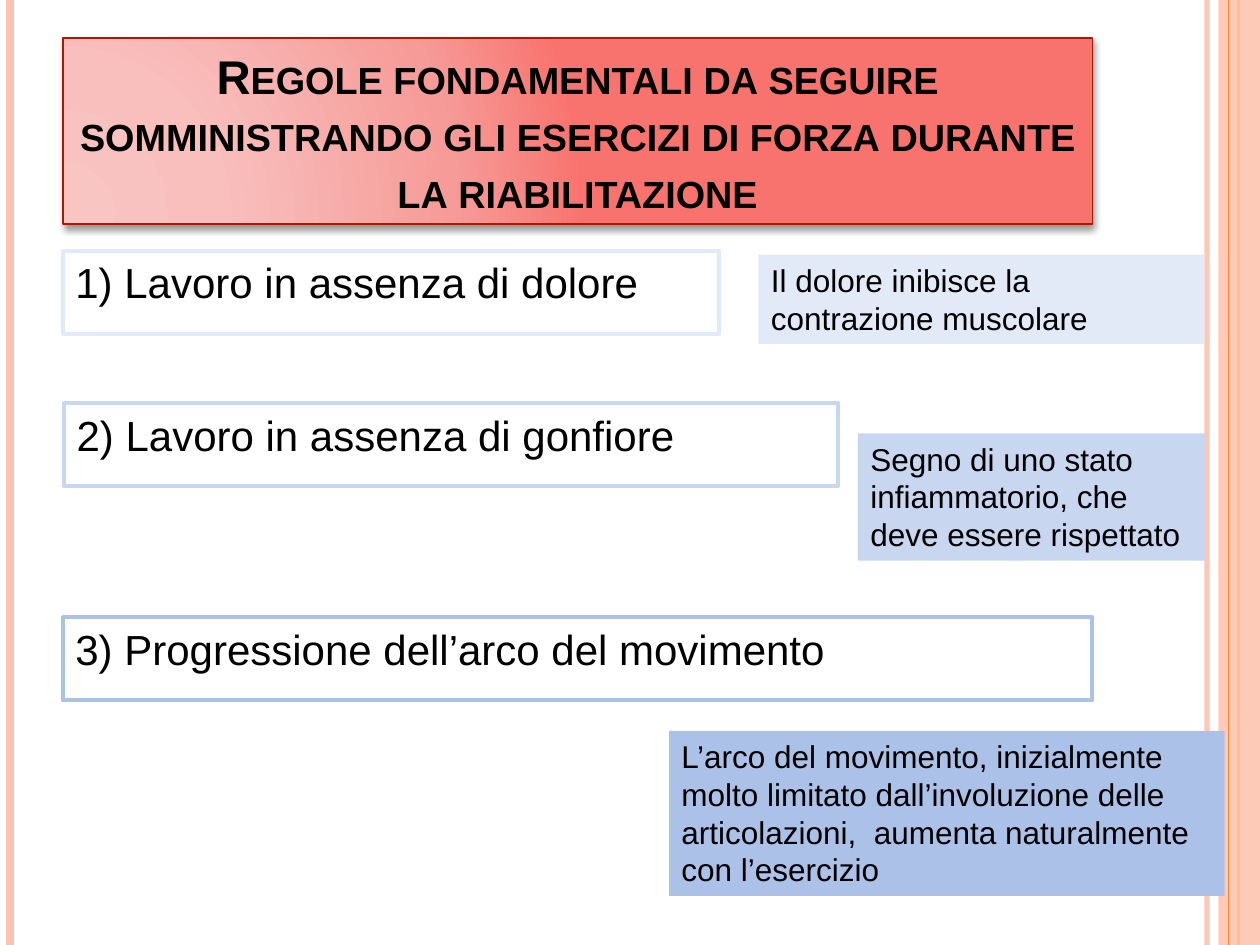
from lxml import etree
from pptx import Presentation
from pptx import util as u
from pptx.dml.color import RGBColor
from pptx.enum import shapes, text
from pptx.oxml import parse_xml
from pptx.oxml.ns import nsdecls, qn

BLACK = RGBColor(0x00, 0x00, 0x00)
PEACH = RGBColor(0xFE, 0xC3, 0xAE)
ORANGE = RGBColor(0xFE, 0x86, 0x37)
DARK_RED = RGBColor(0xAC, 0x18, 0x00)
BLUES = (RGBColor(0xE3, 0xEA, 0xF7), RGBColor(0xC8, 0xD6, 0xF0),
         RGBColor(0xAC, 0xC1, 0xE8))
TITLE_STOPS = ((0, RGBColor(0xF8, 0xC5, 0xC3)), (30, RGBColor(0xF8, 0xBF, 0xBD)),
               (75, RGBColor(0xF6, 0x9B, 0x98)), (100, RGBColor(0xF8, 0x73, 0x6E)))

WIDTH, HEIGHT = 10, 7.5
COLS, ROWS = 100, 75  # grid cells of a tenth of an inch


class RulesSlide:
    font = "Arial"

    def __init__(self, prs):
        self.cell_w = prs.slide_width / COLS
        self.cell_h = prs.slide_height / ROWS
        self.slide = prs.slides.add_slide(prs.slide_layouts[5])

    def place(self, col, row, cols, rows):
        return (round(col * self.cell_w), round(row * self.cell_h),
                round(cols * self.cell_w), round(rows * self.cell_h))

    def set_words(self, sp, words, size, bold=False):
        tf = sp.text_frame
        tf.word_wrap = True
        tf.text = words
        font = tf.paragraphs[0].runs[0].font
        font.name, font.size, font.bold = self.font, u.Pt(size), bold
        font.color.rgb = BLACK
        return tf.paragraphs[0]

    def rail(self, col, color, width, alpha=100):
        x, top, _, height = self.place(col, 0, 0, ROWS)
        line = self.slide.shapes.add_connector(
            shapes.MSO_CONNECTOR.STRAIGHT, x, top, x, top + height)
        line.line.color.rgb, line.line.width = color, u.Pt(width)
        self.fade(line, alpha)
        etree.SubElement(line._element.spPr, qn("a:effectLst"))

    def band(self, col, cols, color, alpha):
        sp = self.slide.shapes.add_shape(
            shapes.MSO_SHAPE.RECTANGLE, *self.place(col, 0, cols, ROWS))
        sp.shadow.inherit = False
        sp.fill.solid()
        sp.fill.fore_color.rgb = color
        sp.line.fill.background()
        self.fade(sp, alpha)

    def fade(self, sp, alpha):
        if alpha < 100:
            color = next(sp._element.spPr.iter(qn("a:srgbClr")))
            etree.SubElement(color, qn("a:alpha"), val=str(alpha * 1000))

    def title(self, words, *cells):
        sp = self.slide.shapes.title
        sp.left, sp.top, sp.width, sp.height = self.place(*cells)
        p = self.set_words(sp, words, 27, bold=True)
        p.alignment = text.PP_ALIGN.CENTER
        p.line_spacing = u.Pt(32.5)
        p.runs[0]._r.get_or_add_rPr().set("cap", "small")
        sp.text_frame.auto_size = text.MSO_AUTO_SIZE.NONE
        sp.text_frame.vertical_anchor = text.MSO_ANCHOR.BOTTOM
        # Radial gradient, outline and soft shadow
        stops = "".join(f'<a:gs pos="{pos * 1000}"><a:srgbClr val="{color}"/></a:gs>'
                        for pos, color in TITLE_STOPS)
        sp.line.color.rgb, sp.line.width = DARK_RED, u.Pt(1)
        ln = sp._element.spPr.find(qn("a:ln"))
        ln.addprevious(parse_xml(
            f'<a:gradFill {nsdecls("a")} rotWithShape="1"><a:gsLst>{stops}</a:gsLst>'
            '<a:path path="circle"><a:fillToRect l="5000" t="100000" r="120000" '
            'b="10000"/></a:path></a:gradFill>'))
        ln.addnext(parse_xml(
            f'<a:effectLst {nsdecls("a")}><a:outerShdw blurRad="{u.Pt(4)}" '
            f'dist="{u.Pt(2)}" dir="5400000" rotWithShape="0"><a:srgbClr val="000000">'
            '<a:alpha val="40000"/></a:srgbClr></a:outerShdw></a:effectLst>'))

    def rule(self, words, color, *cells):
        sp = self.slide.shapes.add_textbox(*self.place(*cells))
        sp.line.color.rgb, sp.line.width = color, u.Pt(2.25)
        p = self.set_words(sp, words, 24)
        pPr = p._p.get_or_add_pPr()
        pPr.set("marL", str(u.Inches(0.3)))
        pPr.set("indent", str(-u.Inches(0.3)))

    def note(self, words, color, *cells):
        sp = self.slide.shapes.add_textbox(*self.place(*cells))
        sp.fill.solid()
        sp.fill.fore_color.rgb = color
        self.set_words(sp, words, 18)
        sp.text_frame.auto_size = text.MSO_AUTO_SIZE.SHAPE_TO_FIT_TEXT


def main():
    prs = Presentation()
    prs.slide_width, prs.slide_height = u.Inches(WIDTH), u.Inches(HEIGHT)
    page = RulesSlide(prs)

    # Side rails
    page.rail(95.8, PEACH, 3, alpha=93)
    page.rail(0.8, PEACH, 4.5)
    page.rail(98.3, ORANGE, 1.5)
    page.band(96.7, 3.3, PEACH, alpha=87)
    page.rail(97.5, ORANGE, 0.75)

    page.title("Regole fondamentali da seguire somministrando gli esercizi di forza "
               "durante la riabilitazione", 5, 3, 81.7, 14.8)

    # Each rule with its explanation, in a deeper blue each time
    rules = (
        ("1) Lavoro in assenza di dolore", (5, 19.9, 52.1, 6.6),
         "Il dolore inibisce la contrazione muscolare", (60.2, 20.2, 35.4, 7.1)),
        ("2) Lavoro in assenza di gonfiore", (5.1, 32, 61.4, 6.6),
         "Segno di uno stato infiammatorio, che deve essere rispettato",
         (68.1, 34.4, 27.6, 10.1)),
        ("3) Progressione dell’arco del movimento", (5, 49, 81.7, 6.6),
         "L’arco del movimento, inizialmente molto limitato dall’involuzione delle "
         "articolazioni,  aumenta naturalmente con l’esercizio",
         (53.1, 58, 44.1, 13.1)),
    )
    for color, (rule, rule_cells, note, note_cells) in zip(BLUES, rules):
        page.rule(rule, color, *rule_cells)
        page.note(note, color, *note_cells)

    prs.save("out.pptx")


if __name__ == "__main__":
    main()
